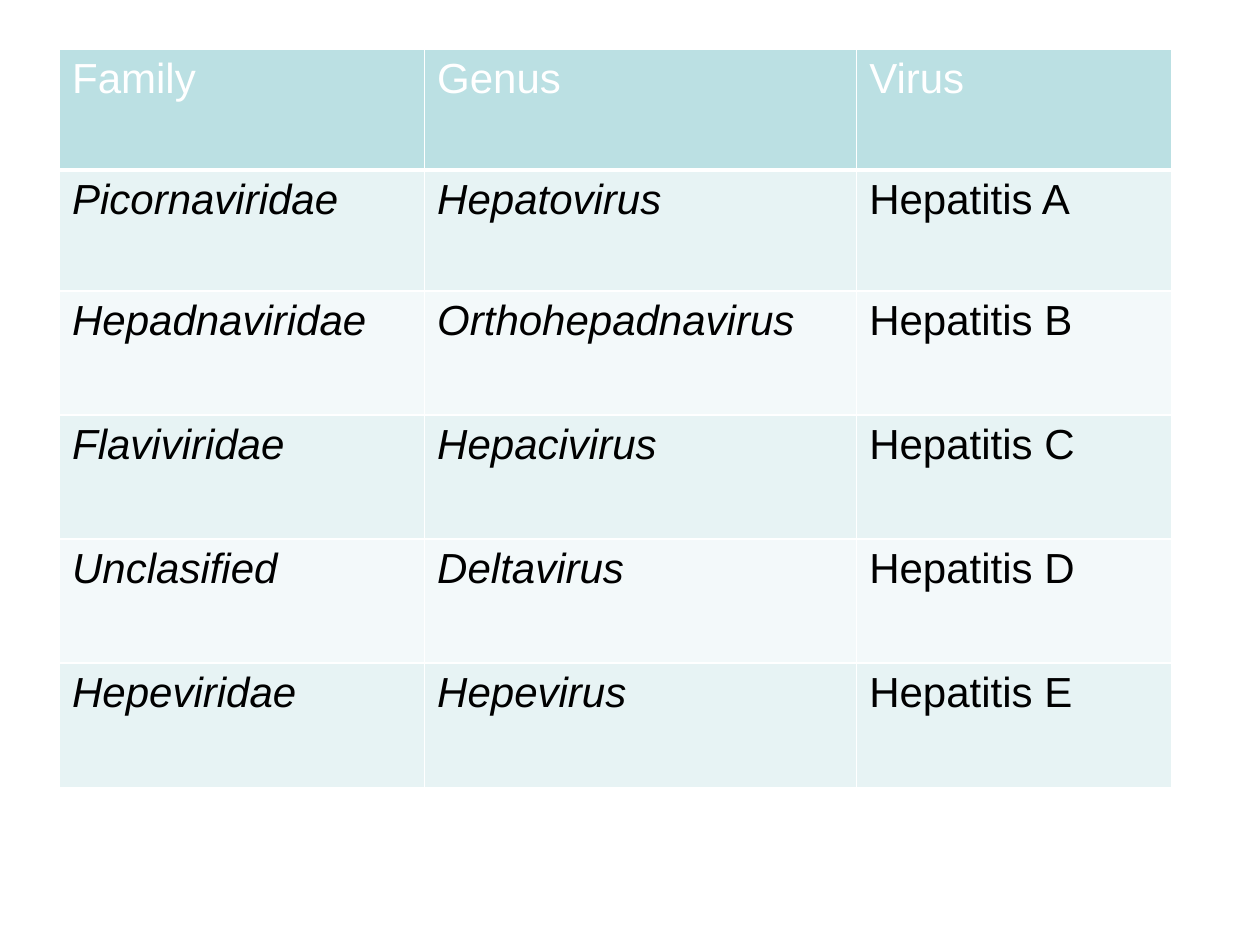
from dataclasses import dataclass

from lxml import etree
from pptx import Presentation
from pptx.dml.color import RGBColor
from pptx.oxml import ns
from pptx.util import Cm, Pt

# Content
HEADER = ("Family", "Genus", "Virus")
VIRUSES = [
    ("Picornaviridae", "Hepatovirus", "Hepatitis A"),
    ("Hepadnaviridae", "Orthohepadnavirus", "Hepatitis B"),
    ("Flaviviridae", "Hepacivirus", "Hepatitis C"),
    ("Unclasified", "Deltavirus", "Hepatitis D"),
    ("Hepeviridae", "Hepevirus", "Hepatitis E"),
]
LATIN_COLUMNS = (0, 1)  # taxonomic names are set in italics

# Layout in centimetres
LEFT, TOP = 1.2, 1.0
COLUMN_WIDTHS = (7.36, 8.71, 6.35)
ROW_HEIGHTS = (2.43, 2.44, 2.5, 2.5, 2.5, 2.5)


@dataclass(frozen=True)
class Theme:
    font: str = "Arial"
    size: int = 24
    header_text: str = "FFFFFF"
    body_text: str = "000000"
    header_fill: str = "BBE0E3"
    bands: tuple = ("E7F3F4", "F3F9FA")
    border: str = "FFFFFF"
    thin: int = 1
    thick: int = 3


THEME = Theme()


def set_borders(cell, widths):
    """Draw the left, right, top and bottom borders, widths in points."""
    properties = cell._tc.get_or_add_tcPr()
    for side, width in zip("LRTB", widths):
        line = etree.SubElement(properties, ns.qn(f"a:ln{side}"), w=str(Pt(width)))
        fill = etree.SubElement(line, ns.qn("a:solidFill"))
        etree.SubElement(fill, ns.qn("a:srgbClr"), val=THEME.border)


def write_cell(cell, words, fill, color, italic):
    cell.fill.solid()
    cell.fill.fore_color.rgb = RGBColor.from_string(fill)
    run = cell.text_frame.paragraphs[0].add_run()
    run.text = words
    run.font.name = THEME.font
    run.font.size = Pt(THEME.size)
    run.font.bold = False
    run.font.italic = italic
    run.font.color.rgb = RGBColor.from_string(color)


def add_virus_table(slide):
    rows = [HEADER, *VIRUSES]
    table = slide.shapes.add_table(
        len(rows), len(HEADER), Cm(LEFT), Cm(TOP),
        Cm(sum(COLUMN_WIDTHS)), Cm(sum(ROW_HEIGHTS)),
    ).table
    for column, width in zip(table.columns, COLUMN_WIDTHS):
        column.width = Cm(width)
    for row, height in zip(table.rows, ROW_HEIGHTS):
        row.height = Cm(height)

    # Header row, then alternating bands
    for r, row in enumerate(rows):
        is_header = r == 0
        fill = THEME.header_fill if is_header else THEME.bands[(r - 1) % 2]
        color = THEME.header_text if is_header else THEME.body_text
        top = THEME.thick if r == 1 else THEME.thin
        bottom = THEME.thick if is_header else THEME.thin
        for c, words in enumerate(row):
            cell = table.cell(r, c)
            set_borders(cell, (THEME.thin, THEME.thin, top, bottom))
            write_cell(cell, words, fill, color, not is_header and c in LATIN_COLUMNS)


def main():
    presentation = Presentation()
    presentation.slide_width, presentation.slide_height = Cm(25.4), Cm(19.05)
    slide = presentation.slides.add_slide(presentation.slide_layouts[6])
    add_virus_table(slide)
    presentation.save("out.pptx")


if __name__ == "__main__":
    main()
